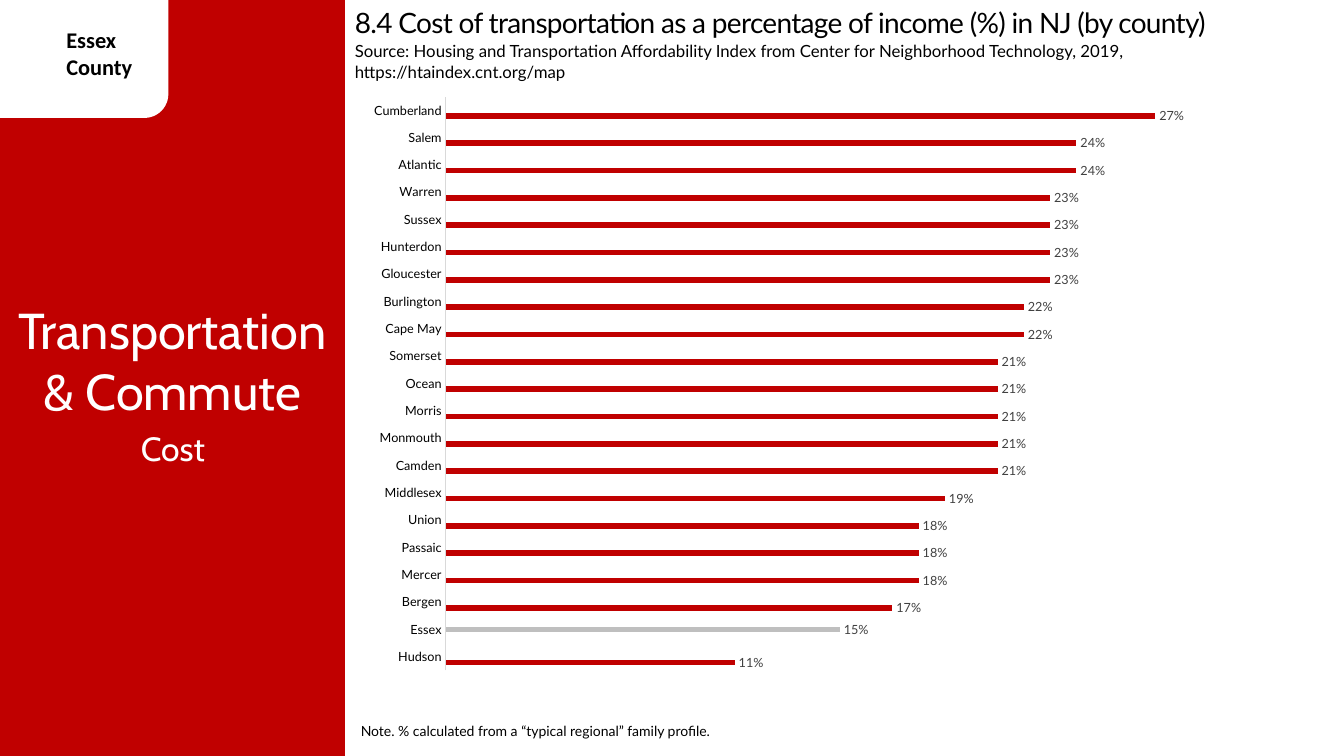
from dataclasses import dataclass

from lxml import etree
from pptx import Presentation
from pptx.chart.data import CategoryChartData
from pptx.dml.color import RGBColor
from pptx.enum.chart import XL_CHART_TYPE, XL_LABEL_POSITION, XL_TICK_MARK
from pptx.enum.shapes import MSO_SHAPE
from pptx.enum.text import MSO_ANCHOR, MSO_AUTO_SIZE, PP_ALIGN
from pptx.oxml.ns import qn
from pptx.util import Inches, Pt

BAR_CLUSTERED = XL_CHART_TYPE.BAR_CLUSTERED
OUTSIDE_END = XL_LABEL_POSITION.OUTSIDE_END
NO_TICK = XL_TICK_MARK.NONE
RECTANGLE = MSO_SHAPE.RECTANGLE
ROUNDED = MSO_SHAPE.ROUNDED_RECTANGLE
TOP, MIDDLE = MSO_ANCHOR.TOP, MSO_ANCHOR.MIDDLE
LEFT, CENTER, JUSTIFY = PP_ALIGN.LEFT, PP_ALIGN.CENTER, PP_ALIGN.JUSTIFY
NO_AUTOFIT = MSO_AUTO_SIZE.NONE


@dataclass(frozen=True)
class Theme:
    red: str = "C00000"
    white: str = "FFFFFF"
    black: str = "000000"
    highlight: str = "BFBFBF"
    spare: str = "8C8C8C"
    value_label: str = "404040"
    axis_line: str = "D9D9D9"
    body_font: str = "Lato"
    section_font: str = "Cabin"
    county_font: str = "Calibri"
    section_size: int = 36
    subsection_size: int = 24
    title_size: int = 20
    county_size: int = 16
    source_size: int = 12
    note_size: int = 10
    chart_size: int = 9


THEME = Theme()


@dataclass(frozen=True)
class Label:
    text: str
    box: tuple[float, float, float, float]
    size: int
    font: str = THEME.body_font
    color: str = THEME.black
    align: PP_ALIGN = LEFT
    anchor: MSO_ANCHOR = TOP
    bold: bool = False


@dataclass(frozen=True)
class Panel:
    kind: MSO_SHAPE
    box: tuple[float, float, float, float]
    color: str


PANELS = [
    Panel(RECTANGLE, (0, 0, 3.42, 7.5), THEME.red),
    Panel(ROUNDED, (-0.33, -0.25, 2, 1.42), THEME.white),
]
TITLE = Label("8.4 Cost of transportation as a percentage of income (%) in NJ (by county)",
              (3.42, 0, 9.86, 0.44), THEME.title_size)
LABELS = [
    Label("Essex County", (0.56, 0.21, 1.11, 0.64), THEME.county_size,
          THEME.county_font, bold=True),
    Label("Transportation & Commute", (0, 2.92, 3.42, 1.31), THEME.section_size,
          THEME.section_font, THEME.white, CENTER),
    Label("Cost", (0.64, 4.2, 2.15, 0.5), THEME.subsection_size,
          THEME.section_font, THEME.white, CENTER),
    Label("Source: Housing and Transportation Affordability Index from Center for "
          "Neighborhood Technology, 2019, https://htaindex.cnt.org/map",
          (3.42, 0.36, 9.19, 0.5), THEME.source_size),
    Label("Note. % calculated from a “typical regional” family profile.",
          (3.48, 7, 9, 0.5), THEME.note_size, align=JUSTIFY, anchor=MIDDLE),
]

CHART_BOX = (3.53, 0.84, 8.89, 5.93)
PLOT_LAYOUT = {"x": 0.1, "y": 0.02, "w": 0.88, "h": 0.96}
HIGHLIGHTED = "Essex"
COST_SHARE = {
    "Hudson": 0.11, "Essex": 0.15, "Bergen": 0.17, "Mercer": 0.18, "Passaic": 0.18,
    "Union": 0.18, "Middlesex": 0.19, "Camden": 0.21, "Monmouth": 0.21, "Morris": 0.21,
    "Ocean": 0.21, "Somerset": 0.21, "Cape May": 0.22, "Burlington": 0.22,
    "Gloucester": 0.23, "Hunterdon": 0.23, "Sussex": 0.23, "Warren": 0.23,
    "Atlantic": 0.24, "Salem": 0.24, "Cumberland": 0.27,
}


def rgb(color: str) -> RGBColor:
    return RGBColor.from_string(color)


def inches(box: tuple[float, ...]) -> list[Inches]:
    return [Inches(length) for length in box]


def style_font(font, size: int, name: str, color: str) -> None:
    font.size, font.name = Pt(size), name
    font.color.rgb = rgb(color)


def add_panel(slide, panel: Panel) -> None:
    shape = slide.shapes.add_shape(panel.kind, *inches(panel.box))
    shape.shadow.inherit = False
    shape.fill.solid()
    shape.fill.fore_color.rgb = rgb(panel.color)
    shape.line.fill.background()


def write_label(shape, label: Label) -> None:
    frame = shape.text_frame
    frame.word_wrap = True
    frame.auto_size = NO_AUTOFIT
    frame.vertical_anchor = label.anchor
    frame.text = label.text
    para = frame.paragraphs[0]
    para.alignment = label.align
    style_font(para.font, label.size, label.font, label.color)
    para.font.bold = label.bold


def place_title(slide) -> None:
    title = slide.shapes.title
    title.left, title.top, title.width, title.height = inches(TITLE.box)
    write_label(title, TITLE)
    span = title.text_frame.paragraphs[0].runs[0]
    span._r.get_or_add_rPr().set("spc", "-50")


def fix_plot_area(chart) -> None:
    """Pin the inner plot area to fractions of the chart frame."""
    plot_area = chart._chartSpace.chart.plotArea
    for old_layout in plot_area.findall(qn("c:layout")):
        plot_area.remove(old_layout)
    layout = etree.Element(qn("c:layout"))
    manual = etree.SubElement(layout, qn("c:manualLayout"))
    settings = {"layoutTarget": "inner", "xMode": "edge", "yMode": "edge", **PLOT_LAYOUT}
    for tag, value in settings.items():
        etree.SubElement(manual, qn(f"c:{tag}")).set("val", str(value))
    plot_area.insert(0, layout)


def add_cost_chart(slide) -> None:
    chart_data = CategoryChartData(number_format="0%")
    chart_data.categories = list(COST_SHARE)
    chart_data.add_series("Series 1", [None if county == HIGHLIGHTED else share
                                       for county, share in COST_SHARE.items()])
    chart_data.add_series("Series 2", [share if county == HIGHLIGHTED else None
                                       for county, share in COST_SHARE.items()])
    chart_data.add_series("Series 3", [None] * len(COST_SHARE))
    chart = slide.shapes.add_chart(BAR_CLUSTERED, *inches(CHART_BOX), chart_data).chart
    chart.has_legend = chart.has_title = False
    style_font(chart.font, THEME.chart_size, THEME.body_font, THEME.black)

    plot = chart.plots[0]
    plot.gap_width, plot.overlap = 182, 0
    plot.vary_by_categories = False
    for series, color in zip(plot.series, (THEME.red, THEME.highlight, THEME.spare)):
        series.format.fill.solid()
        series.format.fill.fore_color.rgb = rgb(color)
        series.invert_if_negative = False
        labels = series.data_labels
        labels.show_value = True
        labels.position = OUTSIDE_END
        labels.number_format, labels.number_format_is_linked = "0%", False
        style_font(labels.font, THEME.chart_size, THEME.body_font, THEME.value_label)

    counties = chart.category_axis
    counties.major_tick_mark = counties.minor_tick_mark = NO_TICK
    counties.format.line.color.rgb = rgb(THEME.axis_line)
    counties.format.line.width = Pt(0.75)
    style_font(counties.tick_labels.font, THEME.chart_size, THEME.body_font, THEME.black)
    shares = chart.value_axis
    shares.visible = shares.has_major_gridlines = False
    shares.minimum_scale, shares.maximum_scale = 0, 0.3
    fix_plot_area(chart)


def main() -> None:
    deck = Presentation()
    deck.slide_width, deck.slide_height = Inches(13.33), Inches(7.5)
    slide = deck.slides.add_slide(deck.slide_layouts.get_by_name("Title Only"))
    for panel in PANELS:
        add_panel(slide, panel)
    for label in LABELS:
        write_label(slide.shapes.add_textbox(*inches(label.box)), label)
    place_title(slide)
    add_cost_chart(slide)
    deck.save("out.pptx")


if __name__ == "__main__":
    main()
